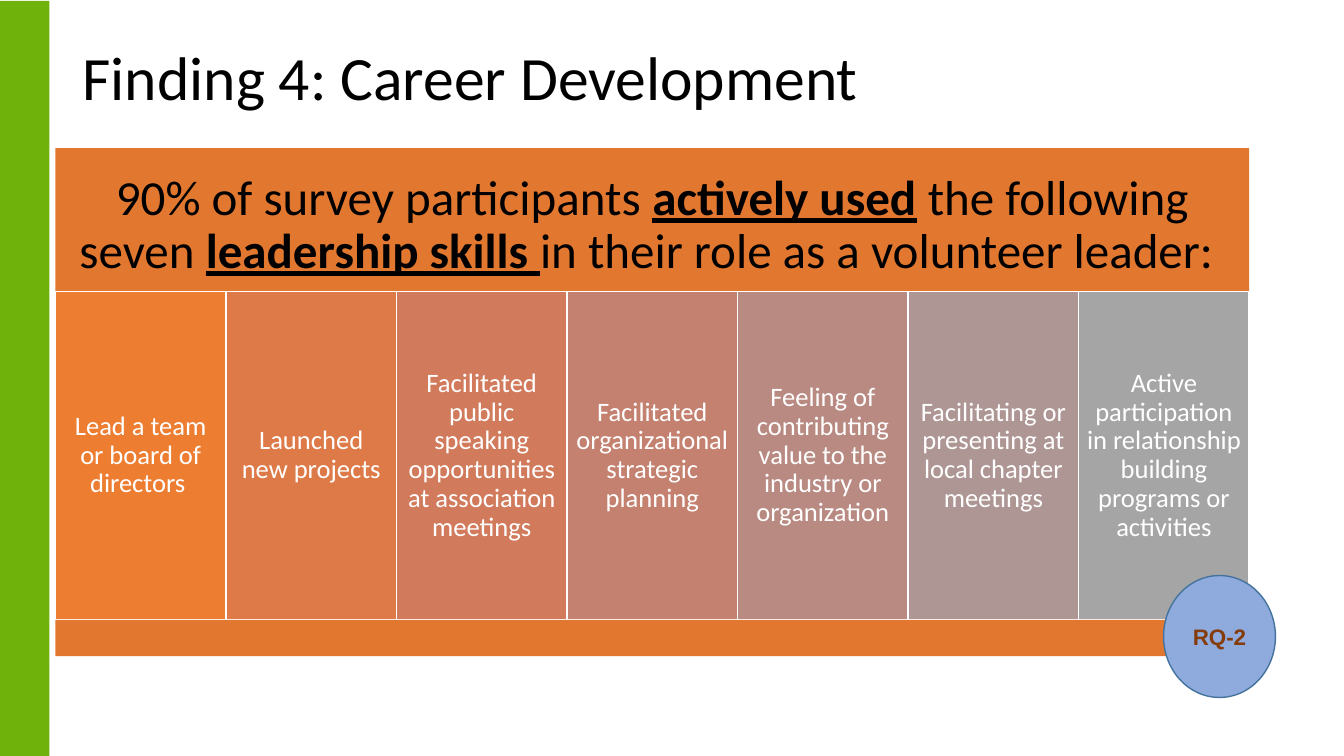
"""Build the career development slide with its seven leadership skills."""
import pptx
import pptx.dml.color
import pptx.enum.shapes
import pptx.enum.text
import pptx.util

Inches = pptx.util.Inches
Pt = pptx.util.Pt
RGB = pptx.dml.color.RGBColor.from_string
SHAPE = pptx.enum.shapes.MSO_SHAPE
ALIGN = pptx.enum.text.PP_ALIGN

THEME = {
    "green": "6FB20C", "orange": "E2772F", "black": "000000", "white": "FFFFFF",
    "badge": "8FAADC", "badge_line": "43739E", "badge_text": "843C0B",
    "title": 44, "heading": 35, "skill": 19, "badge_size": 16,
    "font": "Calibri", "badge_font": "Arial",
}


def add_box(kind, box, fill, line=None):
    sp = s.shapes.add_shape(kind, *map(Inches, box))
    sp.shadow.inherit = False
    sp.fill.solid()
    sp.fill.fore_color.rgb = RGB(fill)
    if line:
        sp.line.color.rgb = RGB(line)
        sp.line.width = Pt(1)
    else:
        sp.line.fill.background()
    return sp


def write(sp, runs, size, color, font=THEME["font"], align=ALIGN.CENTER, spacing=0.9, inset=0.08):
    tf = sp.text_frame
    layout = {"word_wrap": True, "vertical_anchor": pptx.enum.text.MSO_ANCHOR.MIDDLE}
    layout.update({f"margin_{side}": Inches(inset) for side in ("left", "top", "right", "bottom")})
    for name, value in layout.items():
        setattr(tf, name, value)
    p = tf.paragraphs[0]
    p.alignment = align
    p.line_spacing = spacing
    for text, style in runs:
        r = p.add_run()
        r.text = text
        r.font.color.rgb = RGB(color)
        for name, value in {"name": font, "size": Pt(size), **style}.items():
            setattr(r.font, name, value)


prs = pptx.Presentation()
prs.slide_width = Inches(13.33)
prs.slide_height = Inches(7.5)
s = prs.slides.add_slide(prs.slide_layouts[6])

add_box(SHAPE.RECTANGLE, (0, 0.01, 0.49, 7.49), THEME["green"])

title = s.shapes.add_textbox(*map(Inches, (0.72, 0.37, 11.5, 0.86)))
write(title, [("Finding 4: Career Development", {})], THEME["title"], THEME["black"],
      align=ALIGN.LEFT, inset=0.1)

left, width = 0.55, 11.84
emphasis = {"bold": True, "underline": True}
heading = add_box(SHAPE.RECTANGLE, (left, 1.47, width, 1.55), THEME["orange"])
write(heading, [
    ("90% of survey participants ", {}),
    ("actively used", emphasis),
    (" the following seven ", {}),
    ("leadership skills ", emphasis),
    ("in their role as a volunteer leader: ", {}),
], THEME["heading"], THEME["black"], inset=0.15)

skills = [
    ("Lead a team or board of directors ", "ED7D31"),
    ("Launched new projects", "DE7A47"),
    ("Facilitated public speaking opportunities at association meetings", "D17B5C"),
    ("Facilitated organizational strategic planning", "C48170"),
    ("Feeling of contributing value to the industry or organization", "B98A82"),
    ("Facilitating or presenting at local chapter meetings", "AE9694"),
    ("Active participation in relationship building programs or activities", "A5A5A5"),
]
column = width / len(skills)
for i, (skill, fill) in enumerate(skills):
    sp = add_box(SHAPE.RECTANGLE, (left + i * column, 2.89, column, 3.26), fill, THEME["white"])
    write(sp, [(skill, {})], THEME["skill"], THEME["white"])

add_box(SHAPE.RECTANGLE, (left, 6.15, width, 0.36), THEME["orange"])

badge = add_box(SHAPE.OVAL, (11.54, 5.71, 1.11, 1.21), THEME["badge"], THEME["badge_line"])
write(badge, [("RQ-2", {"bold": True})], THEME["badge_size"], THEME["badge_text"],
      font=THEME["badge_font"], spacing=1.0)

prs.save("out.pptx")
